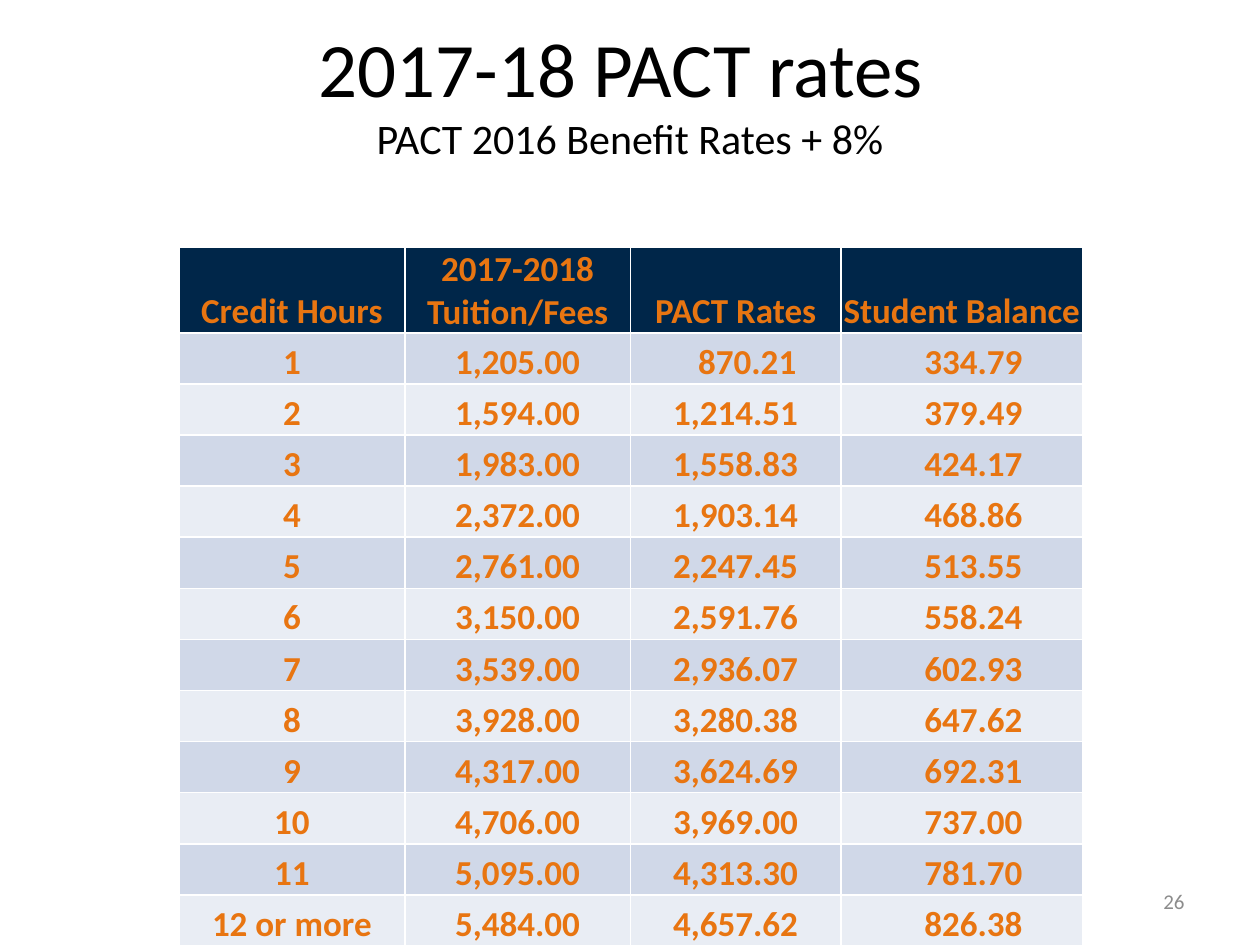
import pptx
import pptx.dml.color
import pptx.enum.text
import pptx.util

Cm = pptx.util.Cm
ALIGN = pptx.enum.text.PP_ALIGN
ANCHOR = pptx.enum.text.MSO_ANCHOR

HEADINGS = ["Credit Hours", "2017-2018 Tuition/Fees", "PACT Rates", "Student Balance"]
RATES = [
    ("1", "1,205.00", "870.21", "334.79"),
    ("2", "1,594.00", "1,214.51", "379.49"),
    ("3", "1,983.00", "1,558.83", "424.17"),
    ("4", "2,372.00", "1,903.14", "468.86"),
    ("5", "2,761.00", "2,247.45", "513.55"),
    ("6", "3,150.00", "2,591.76", "558.24"),
    ("7", "3,539.00", "2,936.07", "602.93"),
    ("8", "3,928.00", "3,280.38", "647.62"),
    ("9", "4,317.00", "3,624.69", "692.31"),
    ("10", "4,706.00", "3,969.00", "737.00"),
    ("11", "5,095.00", "4,313.30", "781.70"),
    ("12 or more", "5,484.00", "4,657.62", "826.38"),
]


def color(value):
    return pptx.dml.color.RGBColor.from_string(value)


class RatesSlide:
    font_name = "Calibri"
    black, gray, orange, navy = "000000", "8C8C8C", "E87511", "002649"
    bands = ("D0D8E8", "E9EDF4")

    def __init__(self, deck):
        self.page = deck.slides.add_slide(deck.slide_layouts[5])

    def style(self, font, size, ink, bold=False):
        font.name = self.font_name
        font.size = pptx.util.Pt(size)
        font.bold = bold
        font.color.rgb = color(ink)

    def title(self, heading, subheading, left, top, width, height):
        box = self.page.shapes.title
        box.left, box.top, box.width, box.height = left, top, width, height
        frame = box.text_frame
        frame.text = heading + "\v" + subheading
        frame.auto_size = pptx.enum.text.MSO_AUTO_SIZE.NONE
        frame.vertical_anchor = ANCHOR.MIDDLE
        frame.margin_top, frame.margin_bottom = 0, Cm(0.79)
        para = frame.paragraphs[0]
        para.alignment = ALIGN.CENTER
        for span, size in zip(para.runs, (44, 24)):
            self.style(span.font, size, self.black)

    def number(self, text, left, top, width, height):
        frame = self.page.shapes.add_textbox(left, top, width, height).text_frame
        frame.text = text
        frame.word_wrap = True
        frame.vertical_anchor = ANCHOR.MIDDLE
        para = frame.paragraphs[0]
        para.alignment = ALIGN.RIGHT
        self.style(para.runs[0].font, 12, self.gray)

    def cell(self, cell, text, fill, indent):
        cell.text = text
        cell.vertical_anchor = ANCHOR.BOTTOM
        cell.margin_left = indent
        cell.margin_top = cell.margin_right = Cm(0.03)
        cell.margin_bottom = 0
        cell.fill.solid()
        cell.fill.fore_color.rgb = color(fill)
        para = cell.text_frame.paragraphs[0]
        para.alignment = ALIGN.CENTER
        self.style(para.runs[0].font, 20, self.orange, bold=True)

    def table(self, rows, left, top, widths, header_height, row_height):
        height = header_height + row_height * (len(rows) - 1)
        table = self.page.shapes.add_table(
            len(rows), len(widths), left, top, sum(widths), height).table
        for column, width in zip(table.columns, widths):
            column.width = width
        for r, values in enumerate(rows):
            table.rows[r].height = row_height if r else header_height
            fill = self.bands[(r - 1) % 2] if r else self.navy
            for c, text in enumerate(values):
                # Amounts below 1,000 are indented to line up with longer ones
                short = r > 0 and c > 0 and "," not in text
                self.cell(table.cell(r, c), text, fill, Cm(0.5 if short else 0.03))


def main():
    deck = pptx.Presentation()
    deck.slide_width, deck.slide_height = Cm(25.4), Cm(19.05)
    slide = RatesSlide(deck)

    # Title and subtitle
    slide.title("2017-18 PACT rates ", "PACT 2016 Benefit Rates + 8%",
                Cm(2.54), Cm(0.64), Cm(20.32), Cm(3.2))

    # Slide number
    slide.number("26", Cm(18.2), Cm(17.66), Cm(5.93), Cm(1.01))

    # Rates by credit hours
    widths = [Cm(4.55), Cm(4.55), Cm(4.24), Cm(4.88)]
    slide.table([HEADINGS, *RATES], Cm(3.61), Cm(4.98), widths, Cm(1.73), Cm(1.03))

    deck.save("out.pptx")


if __name__ == "__main__":
    main()
